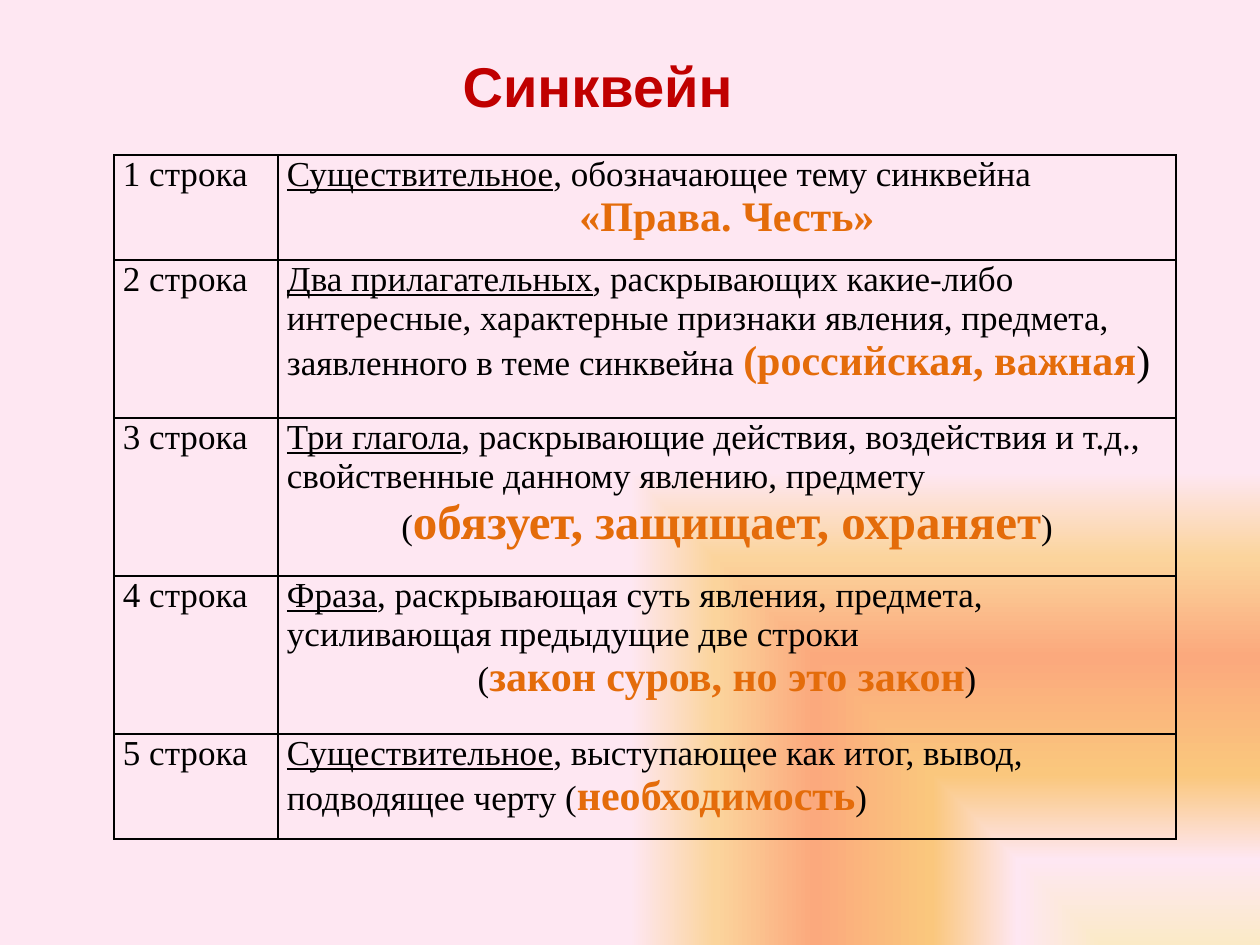
from pptx import Presentation
from pptx.dml.color import RGBColor as RGB
from pptx.enum.text import MSO_AUTO_SIZE as AutoSize, MSO_ANCHOR as Anchor, PP_ALIGN as Align
from pptx.oxml import parse_xml
from pptx.oxml.ns import nsdecls, qn
from pptx.util import Pt

THEME = {
    "title": {"size": 32, "color": "C00000", "bold": True, "name": "Arial"},
    "body": {"size": 20, "color": "000000", "name": "Times New Roman"},
    "key": {"underline": True},
    "answer": {"size": 24, "color": "E46C0A", "bold": True},
    "big answer": {"size": 28, "color": "E46C0A", "bold": True},
    "large": {"size": 24},
    "border": "000000",
    "background": [(0, "FBEAC7"), (18, "FEE7F2"), (36, "FAC77D"),
                   (61, "FBA97D"), (82, "FBD49C"), (100, "FEE7F2")],
}
EMU_PER_PX = 914400 / 126


def px(value):
    return round(value * EMU_PER_PX)


def add_run(paragraph, text, style):
    run = paragraph.add_run()
    run.text = text
    for attribute, value in style.items():
        if attribute == "color":
            run.font.color.rgb = RGB.from_string(value)
        else:
            setattr(run.font, attribute, Pt(value) if attribute == "size" else value)


deck = Presentation()
deck.slide_width, deck.slide_height = px(1260), px(945)
slide = deck.slides.add_slide(deck.slide_layouts[6])

# Background: rectangular gradient spreading from the bottom right corner
slide.background.fill.gradient()
gradient = slide.element.find(".//" + qn("a:gradFill"))
stops = "".join(f'<a:gs pos="{position * 1000}"><a:srgbClr val="{color}"/></a:gs>'
                for position, color in THEME["background"])
gradient.getparent().replace(gradient, parse_xml(
    f'<a:gradFill {nsdecls("a")} rotWithShape="1"><a:gsLst>{stops}</a:gsLst>'
    '<a:path path="rect"><a:fillToRect l="100000" t="100000"/></a:path></a:gradFill>'))

# Title
title = slide.shapes.add_textbox(px(422), px(45), px(367), px(81)).text_frame
title.word_wrap = True
title.auto_size = AutoSize.SHAPE_TO_FIT_TEXT
title.paragraphs[0].alignment = Align.CENTER
add_run(title.paragraphs[0], "Синквейн ", THEME["title"])

# Rules of the poem: each line holds paragraphs of (text, style) runs
poem_lines = [
    [[("Существительное", "key"), (", обозначающее тему синквейна", "body")],
     [("«Права. Честь»", "answer")]],
    [[("Два прилагательных", "key"),
      (", раскрывающих какие-либо интересные, характерные признаки явления, "
       "предмета, заявленного в теме синквейна ", "body"),
      ("(российская, важная", "answer"), (")", "large")]],
    [[("Три глагола", "key"),
      (", раскрывающие действия, воздействия и т.д., "
       "свойственные данному явлению, предмету", "body")],
     [("(", "body"), ("обязует, защищает, охраняет", "big answer"), (")", "body")]],
    [[("Фраза", "key"),
      (", раскрывающая суть явления, предмета, "
       "усиливающая предыдущие две строки", "body")],
     [("(", "body"), ("закон суров, но это закон", "answer"), (")", "body")]],
    [[("Существительное", "key"),
      (", выступающее как итог, вывод, подводящее черту (", "body"),
      ("необходимость", "answer"), (")", "body")]],
]
column_widths = [164, 898]
row_heights = [105, 158, 158, 158, 105]

# Table grid
table = slide.shapes.add_table(
    len(row_heights), len(column_widths), px(114), px(155),
    px(sum(column_widths)), px(sum(row_heights))).table
table.first_row = table.horz_banding = False
for column, width in zip(table.columns, column_widths):
    column.width = px(width)
for row, height in zip(table.rows, row_heights):
    row.height = px(height)

# Cell text, margins and borders
cell_format = {"margin_left": px(9), "margin_right": px(9), "margin_top": 0,
               "margin_bottom": 0, "vertical_anchor": Anchor.TOP}
for number, rule in enumerate(poem_lines, 1):
    label = [[(f"{number} строка", "body")]]
    for cell, paragraphs in zip(table.rows[number - 1].cells, (label, rule)):
        for attribute, value in cell_format.items():
            setattr(cell, attribute, value)
        cell.fill.background()
        frame = cell.text_frame
        for index, runs in enumerate(paragraphs):
            paragraph = frame.add_paragraph() if index else frame.paragraphs[0]
            paragraph.alignment = Align.CENTER if index else Align.LEFT
            for text, style in runs:
                add_run(paragraph, text, THEME["body"] | THEME[style])
        properties = cell._tc.get_or_add_tcPr()
        for place, side in enumerate("LRTB"):
            properties.insert(place, parse_xml(
                f'<a:ln{side} {nsdecls("a")} w="{Pt(1)}"><a:solidFill>'
                f'<a:srgbClr val="{THEME["border"]}"/></a:solidFill></a:ln{side}>'))

deck.save("out.pptx")
